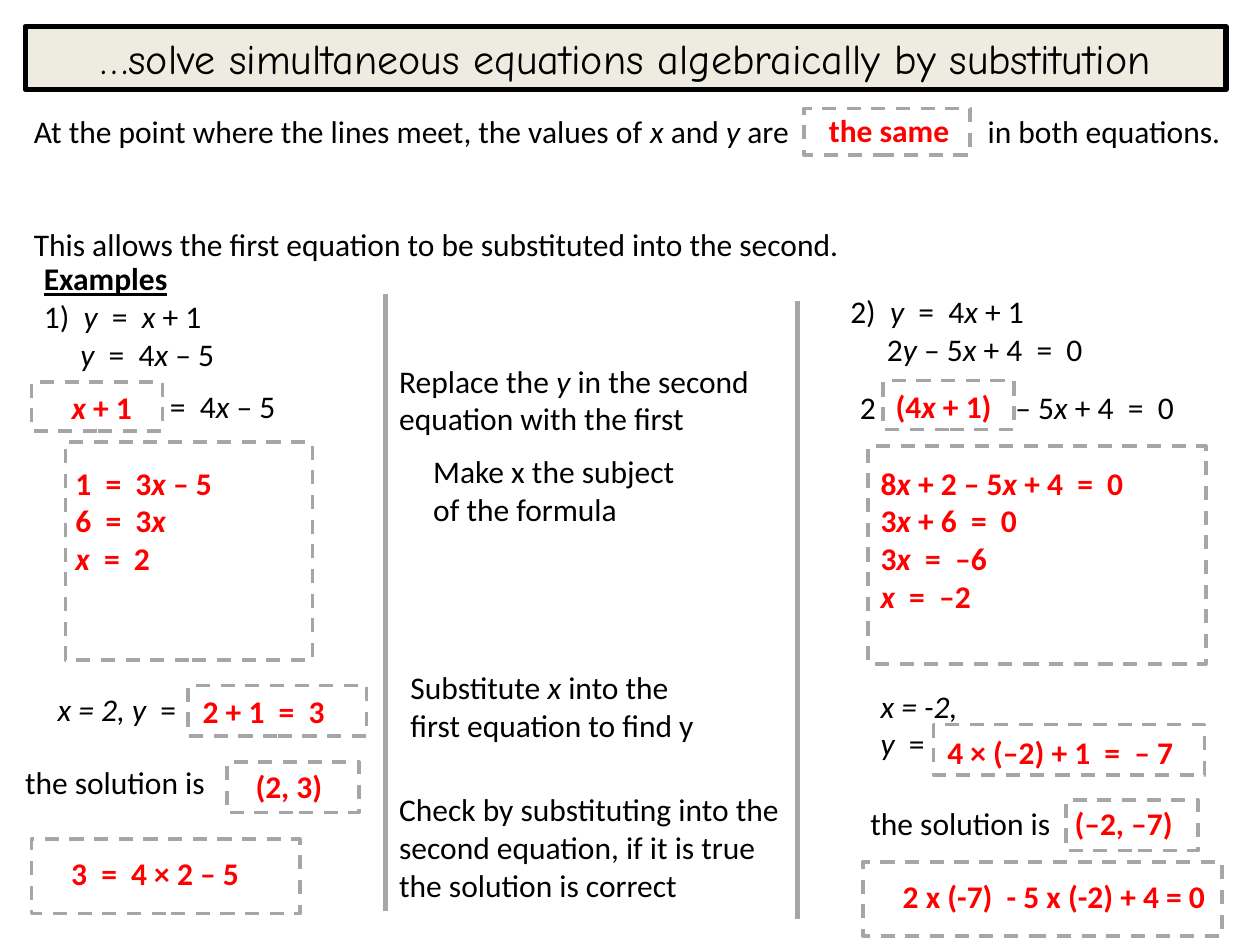
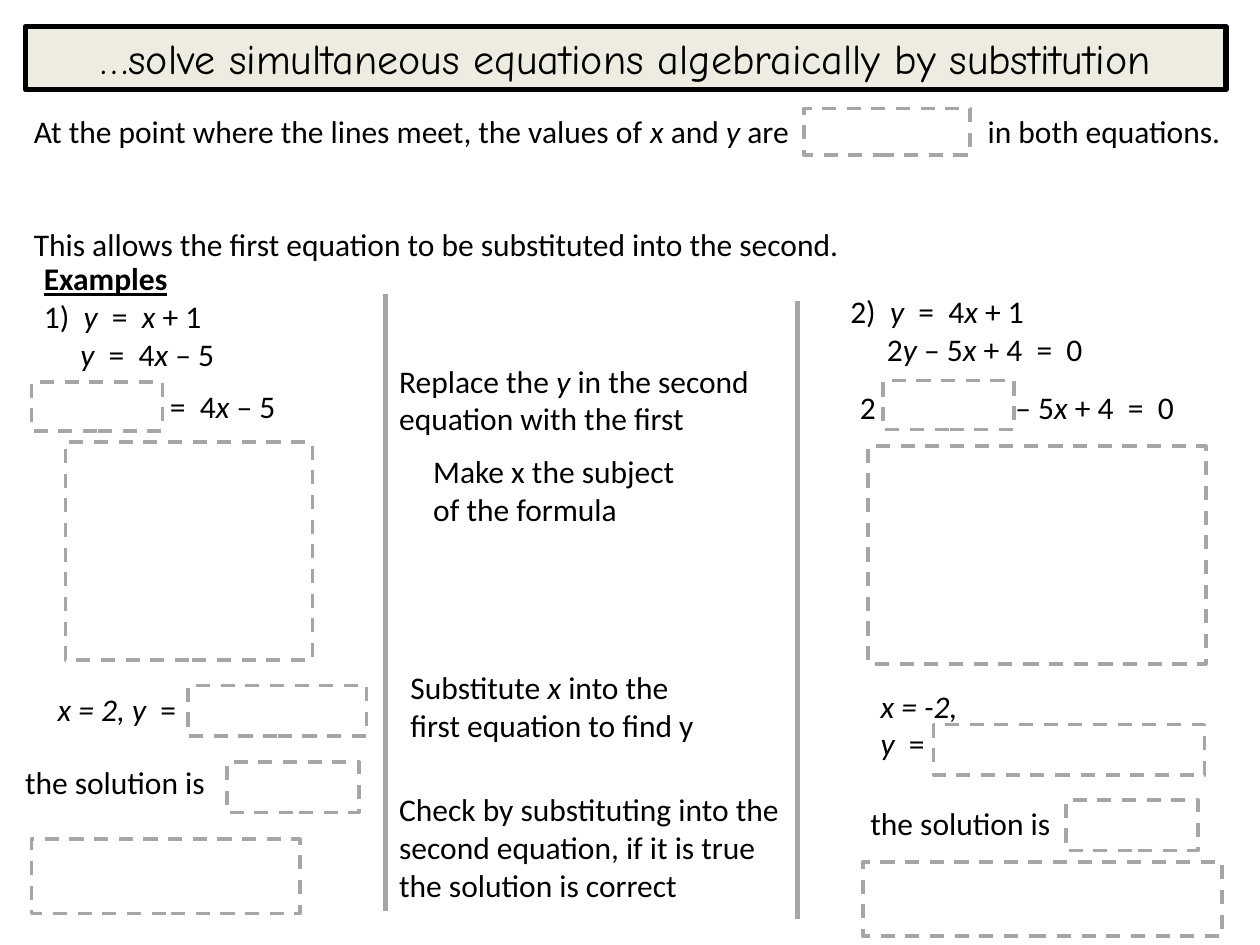
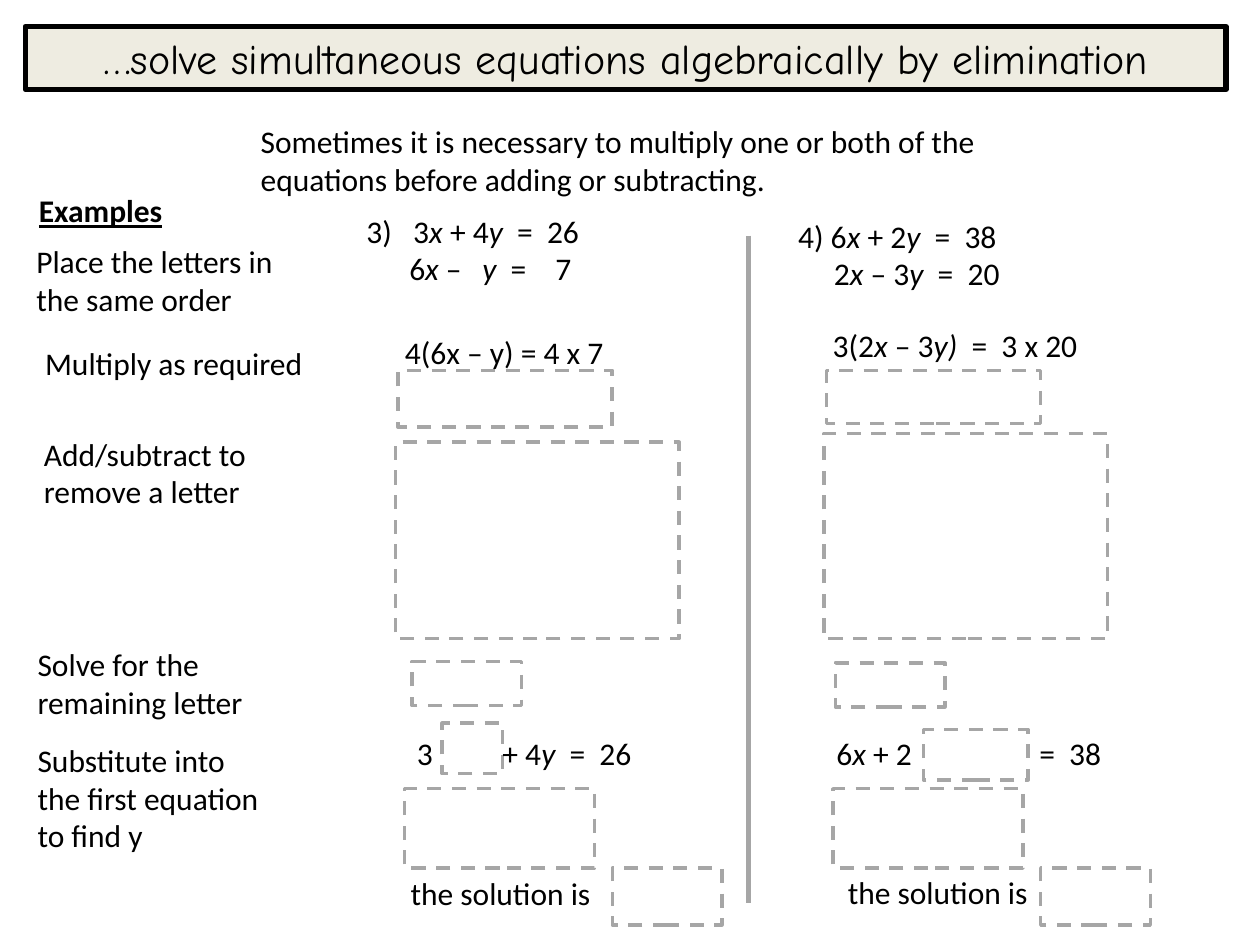
import pptx
import pptx.dml.color
import pptx.enum.dml
import pptx.enum.shapes
import pptx.enum.text
import pptx.oxml
import pptx.oxml.ns
import pptx.util

PX = 9144  # EMU per px, 100 px to the inch
BLACK = pptx.dml.color.RGBColor(0x00, 0x00, 0x00)
RED = pptx.dml.color.RGBColor(0xFF, 0x00, 0x00)
GREY = pptx.dml.color.RGBColor(0xA6, 0xA6, 0xA6)
CREAM = pptx.dml.color.RGBColor(0xEE, 0xEC, 0xE1)
BODY_FONT, TITLE_FONT = "Calibri", "Comic Neue"
HEADING = "Examples"
TITLE_ONLY = 5

prs = pptx.Presentation()
prs.slide_width, prs.slide_height = 1000 * PX, 750 * PX


def start_slide(title, blanks, dividers):
    """Add a slide with its title band, dashed answer blanks and column dividers."""
    slide = prs.slides.add_slide(prs.slide_layouts[TITLE_ONLY])
    band = slide.shapes.title
    band.left, band.top, band.width, band.height = (n * PX for n in (20, 21, 953, 50))
    band.fill.solid()
    band.fill.fore_color.rgb = CREAM
    band.line.color.rgb = BLACK
    band.line.width = pptx.util.Pt(3)
    band.text_frame.text = title
    band.text_frame.auto_size = pptx.enum.text.MSO_AUTO_SIZE.NONE
    band.text_frame.paragraphs[0].alignment = pptx.enum.text.PP_ALIGN.CENTER
    font = band.text_frame.paragraphs[0].runs[0].font
    font.name, font.size, font.color.rgb = TITLE_FONT, pptx.util.Pt(24), BLACK

    for place in blanks:
        blank = slide.shapes.add_shape(
            pptx.enum.shapes.MSO_SHAPE.RECTANGLE, *(n * PX for n in place))
        blank.shadow.inherit = False
        blank.fill.background()
        blank.line.color.rgb = GREY
        blank.line.width = pptx.util.Pt(2)
        blank.line.dash_style = pptx.enum.dml.MSO_LINE.DASH

    for x, top, bottom in dividers:
        divider = slide.shapes.add_connector(
            pptx.enum.shapes.MSO_CONNECTOR.STRAIGHT, x * PX, top * PX, x * PX, bottom * PX)
        divider.line.color.rgb = GREY
        divider.line.width = pptx.util.Pt(3)
        pptx.oxml.ns.qn("a:effectLst")
        divider._element.spPr.append(pptx.oxml.parse_xml(
            f'<a:effectLst {pptx.oxml.ns.nsdecls("a")}/>'))
    return slide


def write(slide, place, text, tabs=(), color=BLACK, bold=False, gap=0):
    """Add a text box: *stars* mark italics, tabs are stops in px, gap is px between paragraphs."""
    box = slide.shapes.add_textbox(*(n * PX for n in place))
    frame = box.text_frame
    frame.word_wrap = True
    frame.auto_size = pptx.enum.text.MSO_AUTO_SIZE.SHAPE_TO_FIT_TEXT
    for number, line in enumerate(text.split("\n")):
        paragraph = frame.add_paragraph() if number else frame.paragraphs[0]
        if number and gap:
            paragraph.space_before = gap * PX
        if tabs:
            stops = "".join(f'<a:tab pos="{stop * PX}" algn="l"/>' for stop in tabs)
            paragraph._p.get_or_add_pPr().append(pptx.oxml.parse_xml(
                f'<a:tabLst {pptx.oxml.ns.nsdecls("a")}>{stops}</a:tabLst>'))
        for index, part in enumerate(line.split("*")):
            if not part:
                continue
            run = paragraph.add_run()
            run.text = part
            font = run.font
            font.name, font.size, font.color.rgb = BODY_FONT, pptx.util.Pt(18), color
            font.italic = index % 2 == 1
            font.bold = bold or line == HEADING
            font.underline = line == HEADING


# Substitution: the worked version, then the same sheet with empty blanks
substitution_blanks = [
    (638, 86, 132, 37),
    (25, 303, 104, 39), (52, 351, 196, 173), (149, 544, 142, 40),
    (180, 605, 105, 40), (25, 666, 213, 59),
    (701, 302, 104, 39), (689, 354, 268, 173), (741, 575, 215, 40),
    (846, 635, 105, 40), (685, 684, 285, 59),
]
substitution_dividers = [(306, 233, 723), (633, 239, 729)]
substitution_steps = [
    ((307, 282, 303, 71), "Replace the *y *in the second equation with the first"),
    ((334, 354, 213, 71), "Make x the subject of the formula"),
    ((316, 525, 250, 71), "Substitute *x* into the first equation to find y"),
    ((307, 622, 323, 101),
     "Check by substituting into the second equation, if it is true the solution is correct"),
]
substitution_examples = [
    ((25, 201, 250, 101), "Examples\n1)  *y  *=  *x* + 1\n\t*y  *=  4*x* – 5", [29]),
    ((51, 302, 181, 40), "\t=  4*x* – 5", [74]),
    ((36, 543, 116, 40), "*x = 2, y*  ="),
    ((10, 601, 165, 40), "the solution is"),
    ((665, 227, 281, 71), "2)  *y  *=  4*x* + 1\n\t2*y *– 5*x* + 4  =  0", [29]),
    ((667, 303, 278, 40), " 2\t– 5*x* + 4  =  0", [129]),
    ((689, 540, 88, 71), "*x = -2,*\n*y*  ="),
    ((681, 633, 165, 40), "the solution is"),
]
substitution_answers = [
    ((648, 83, 122, 40), "the same"),
    ((47, 303, 74, 40), "*x* + 1"),
    ((50, 363, 132, 101), "1  =  3*x* – 5\n6  =  3*x*\n*x*  =  2"),
    ((151, 544, 119, 40), "2 + 1  =  3"),
    ((193, 604, 74, 40), "(2, 3)"),
    ((41, 673, 161, 40), " 3  =  4 × 2 – 5"),
    ((701, 302, 97, 40), "(4*x* + 1)"),
    ((689, 363, 234, 131), "8*x* + 2 – 5*x* + 4  =  0\n3*x* + 6  =  0\n3*x*  =  –6\n*x*  =  –2"),
    ((742, 577, 202, 40), "4 × (–2) + 1  =  – 7"),
    ((843, 633, 99, 40), "(–2, –7)"),
    ((701, 691, 269, 40), " 2 x (-7)  - 5 x (-2) + 4 = 0"),
]
for answers in (substitution_answers, []):
    slide = start_slide("…solve simultaneous equations algebraically by substitution",
                        substitution_blanks, substitution_dividers)
    write(slide, (17, 84, 963, 101),
          "At the point where the lines meet, the values of *x* and *y* are\tin both equations.\n"
          "This allows the first equation to be substituted into the second.",
          tabs=[757], gap=60)
    for entry in substitution_steps + substitution_examples:
        write(slide, *entry)
    for place, answer in answers:
        write(slide, place, answer, color=RED, bold=True)

# Elimination
elimination_blanks = [
    (316, 294, 170, 45), (314, 351, 225, 156), (327, 525, 87, 35),
    (351, 574, 48, 40), (321, 626, 151, 63), (486, 689, 87, 45),
    (656, 294, 170, 42), (654, 344, 225, 163), (663, 526, 87, 35),
    (733, 579, 83, 40), (661, 626, 151, 63), (826, 689, 87, 45),
]
elimination_steps = [
    ((197, 92, 598, 71),
     "Sometimes it is necessary to multiply one or both of the equations "
     "before adding or subtracting."),
    ((21, 147, 250, 40), HEADING),
    ((19, 187, 216, 71), "Place the letters in the same order"),
    ((26, 268, 230, 40), "Multiply as required"),
    ((25, 340, 191, 71), "Add/subtract to remove a letter"),
    ((20, 507, 217, 71), "Solve for the remaining letter"),
    ((20, 583, 203, 101), "Substitute into the first equation to find y"),
]
elimination_examples = [
    ((281, 163, 204, 71), "3)   3*x *+ 4*y*  =  26\n\t6*x* –\t*y*  =\t7", [34, 92, 150]),
    ((306, 259, 194, 40), " 4(6x – y) = 4 x 7"),
    ((321, 578, 200, 40), "3\t+ 4*y*  =  26", [68]),
    ((316, 689, 165, 40), "the solution is"),
    ((618, 167, 198, 71), " 4) 6*x *+ 2*y*  =  38\n\t2*x* – 3*y*  =  20", [34]),
    ((651, 254, 228, 40), "3(2*x *– 3*y)  *=  3 x 20"),
    ((654, 578, 235, 40), "6*x* + 2\t=  38", [161]),
    ((663, 688, 165, 40), "the solution is"),
]
slide = start_slide("…solve simultaneous equations algebraically by elimination",
                    elimination_blanks, [(594, 187, 717)])
for entry in elimination_steps + elimination_examples:
    write(slide, *entry)

prs.save("out.pptx")
